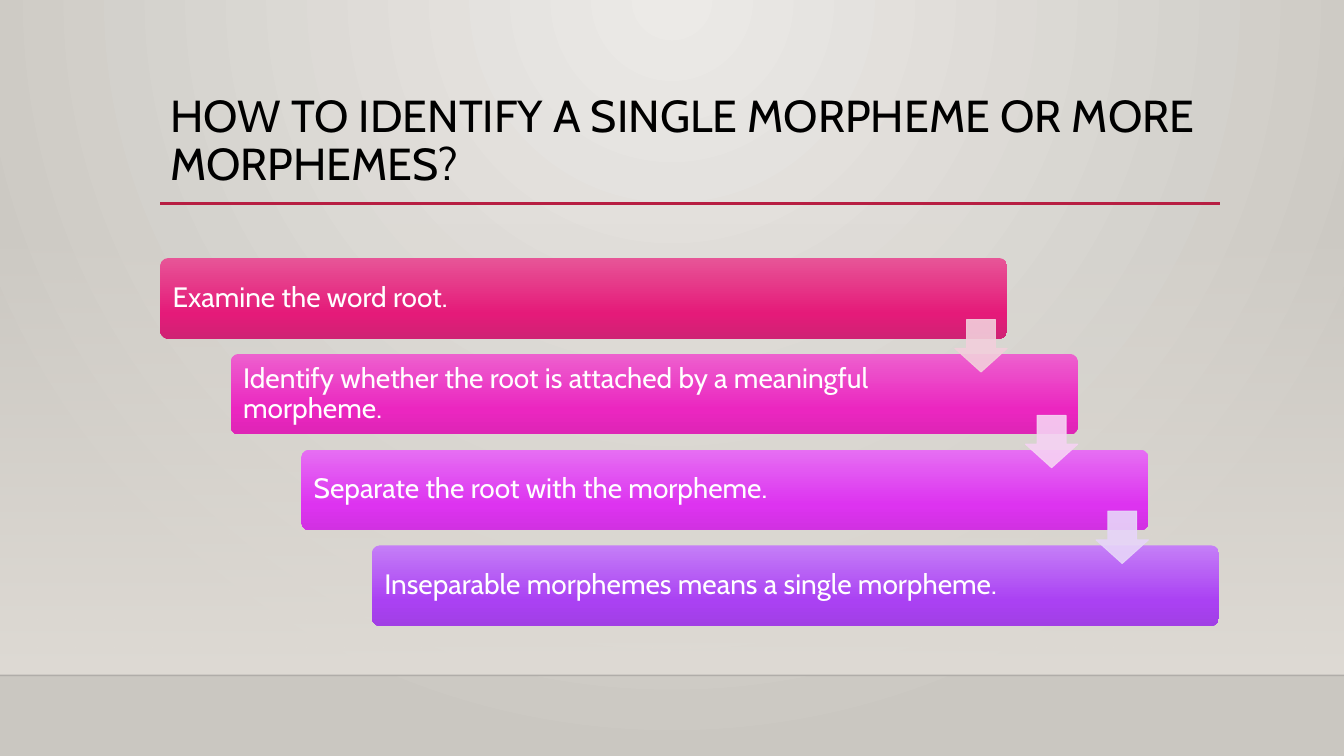
import pptx
import pptx.util
import pptx.dml.color
import pptx.enum.shapes
import pptx.enum.text
import pptx.oxml
import pptx.oxml.ns
from dataclasses import dataclass

SHAPES = pptx.enum.shapes.MSO_SHAPE
ANCHORS = pptx.enum.text.MSO_ANCHOR
WIDTH, HEIGHT = 13.33, 7.5

# Staircase grid: each step moves one column right and one row down
GRID_LEFT, GRID_TOP = 1.59, 2.56
COLUMN, ROW = 0.7, 0.95
CARD_WIDTH, CARD_HEIGHT = 8.4, 0.8
ARROW_SIZE, ARROW_DROP = 0.52, 0.61
FLOOR = 6.7


@dataclass(frozen=True)
class Theme:
    font: str = "Cabin"
    title_size: int = 32
    step_size: int = 20
    title: str = "000000"
    step: str = "FFFFFF"
    rule: str = "B71E42"
    floor_line: str = "000001"
    wall: tuple = ((0, "ECEAE7", 100), (100, "CAC7C1", 100))
    floor_fade: tuple = ((0, "DFDBD5", 0), (100, "DFDBD5", 100))
    cards: tuple = (
        ("E75597", "E51A79", "CF2374"),
        ("ED61CE", "EB26C0", "DE25B6"),
        ("E66FF3", "DD33F0", "D131E2"),
        ("C57FF7", "AA41F3", "A13FE5"),
    )
    arrows: tuple = ("F2CFDB", "F6D2F3", "E7D5F9")


THEME = Theme()
TITLE = "HOW TO IDENTIFY A SINGLE MORPHEME OR MORE MORPHEMES?"
STEPS = (
    "Examine the word root.",
    "Identify whether the root is attached by a meaningful morpheme.",
    "Separate the root with the morpheme.",
    "Inseparable morphemes means a single morpheme.",
)


def inches(*lengths):
    return [pptx.util.Inches(length) for length in lengths]


def rgb(code):
    return pptx.dml.color.RGBColor.from_string(code)


def set_gradient(fill, owner, stops, direction='<a:lin ang="5400000" scaled="0"/>'):
    """Replace the solid fill inside owner with a gradient of (position, colour, opacity)."""
    fill.solid()
    solid = next(owner.iter(pptx.oxml.ns.qn("a:solidFill")))
    stop_xml = "".join(
        f'<a:gs pos="{position * 1000}"><a:srgbClr val="{colour}">'
        f'<a:alpha val="{opacity * 1000}"/></a:srgbClr></a:gs>'
        for position, colour, opacity in stops
    )
    gradient = pptx.oxml.parse_xml(
        f'<a:gradFill {pptx.oxml.ns.nsdecls("a")} rotWithShape="1">'
        f"<a:gsLst>{stop_xml}</a:gsLst>{direction}</a:gradFill>"
    )
    solid.getparent().replace(solid, gradient)


def set_opacity(element, percent):
    for colour in element.spPr.iter(pptx.oxml.ns.qn("a:srgbClr")):
        alpha = pptx.oxml.parse_xml(
            f'<a:alpha {pptx.oxml.ns.nsdecls("a")} val="{percent * 1000}"/>'
        )
        colour.append(alpha)


def add_rule(slide, left, right, top, colour, weight):
    start_x, start_y, end_x, end_y = inches(left, top, right, top)
    rule = slide.shapes.add_connector(
        pptx.enum.shapes.MSO_CONNECTOR.STRAIGHT, start_x, start_y, end_x, end_y
    )
    rule.line.color.rgb = rgb(colour)
    rule.line.width = pptx.util.Pt(weight)
    effects = pptx.oxml.parse_xml(f'<a:effectLst {pptx.oxml.ns.nsdecls("a")}/>')
    rule.element.spPr.append(effects)
    return rule


def add_plain_shape(slide, kind, left, top, width, height, adjustments=()):
    shape = slide.shapes.add_shape(kind, *inches(left, top, width, height))
    shape.shadow.inherit = False
    shape.line.fill.background()
    for index, value in enumerate(adjustments):
        shape.adjustments[index] = value
    return shape


def write_text(shape, text, size, colour, anchor, insets):
    frame = shape.text_frame
    frame.word_wrap = True
    frame.vertical_anchor = anchor
    (frame.margin_left, frame.margin_top,
     frame.margin_right, frame.margin_bottom) = inches(*insets)
    paragraph = frame.paragraphs[0]
    paragraph.text = text
    paragraph.alignment = pptx.enum.text.PP_ALIGN.LEFT
    paragraph.line_spacing = 0.9
    paragraph.font.name = THEME.font
    paragraph.font.size = pptx.util.Pt(size)
    paragraph.font.color.rgb = rgb(colour)


def add_backdrop(slide):
    set_gradient(
        slide.background.fill, slide.element, THEME.wall,
        '<a:path path="circle"><a:fillToRect l="43000" r="43000" b="100000"/></a:path>',
    )
    fade_top = 2.21
    fade = add_plain_shape(slide, SHAPES.RECTANGLE, 0, fade_top, WIDTH, FLOOR - fade_top)
    set_gradient(fade.fill, fade.element.spPr, THEME.floor_fade)
    floor_line = add_rule(slide, 0, WIDTH, FLOOR, THEME.floor_line, 1)
    set_opacity(floor_line.element, 20)


def add_title(slide):
    add_rule(slide, GRID_LEFT, 12.1, 2.02, THEME.rule, 2.5)
    title = slide.shapes.add_textbox(*inches(GRID_LEFT, 0.88, 10.5, 1.15))
    write_text(title, TITLE, THEME.title_size, THEME.title, ANCHORS.TOP,
               (0.1, 0.05, 0.1, 0.05))


def add_step(slide, index, text, colours):
    card = add_plain_shape(
        slide, SHAPES.ROUNDED_RECTANGLE, GRID_LEFT + index * COLUMN,
        GRID_TOP + index * ROW, CARD_WIDTH, CARD_HEIGHT, (0.1,)
    )
    stops = [(position, colour, 100) for position, colour in zip((0, 69, 100), colours)]
    set_gradient(card.fill, card.element.spPr, stops)
    # The wide right inset keeps the words clear of the arrows
    write_text(card, text, THEME.step_size, THEME.step, ANCHORS.MIDDLE,
               (0.1, 0.08, 1.33, 0.08))


def add_step_arrow(slide, index, colour):
    left = GRID_LEFT + index * COLUMN + CARD_WIDTH - ARROW_SIZE
    top = GRID_TOP + index * ROW + ARROW_DROP
    arrow = add_plain_shape(slide, SHAPES.DOWN_ARROW, left, top,
                            ARROW_SIZE, ARROW_SIZE, (0.55, 0.45))
    arrow.fill.solid()
    arrow.fill.fore_color.rgb = rgb(colour)
    arrow.line.color.rgb = rgb(colour)
    arrow.line.width = pptx.util.Pt(0.75)
    set_opacity(arrow.element, 90)


def main():
    presentation = pptx.Presentation()
    presentation.slide_width, presentation.slide_height = inches(WIDTH, HEIGHT)
    slide = presentation.slides.add_slide(presentation.slide_layouts[6])
    add_backdrop(slide)
    add_title(slide)
    # Cards first, so that every arrow lies over both of its neighbours
    for index, (text, colours) in enumerate(zip(STEPS, THEME.cards)):
        add_step(slide, index, text, colours)
    for index, colour in enumerate(THEME.arrows):
        add_step_arrow(slide, index, colour)
    presentation.save("out.pptx")


if __name__ == "__main__":
    main()
